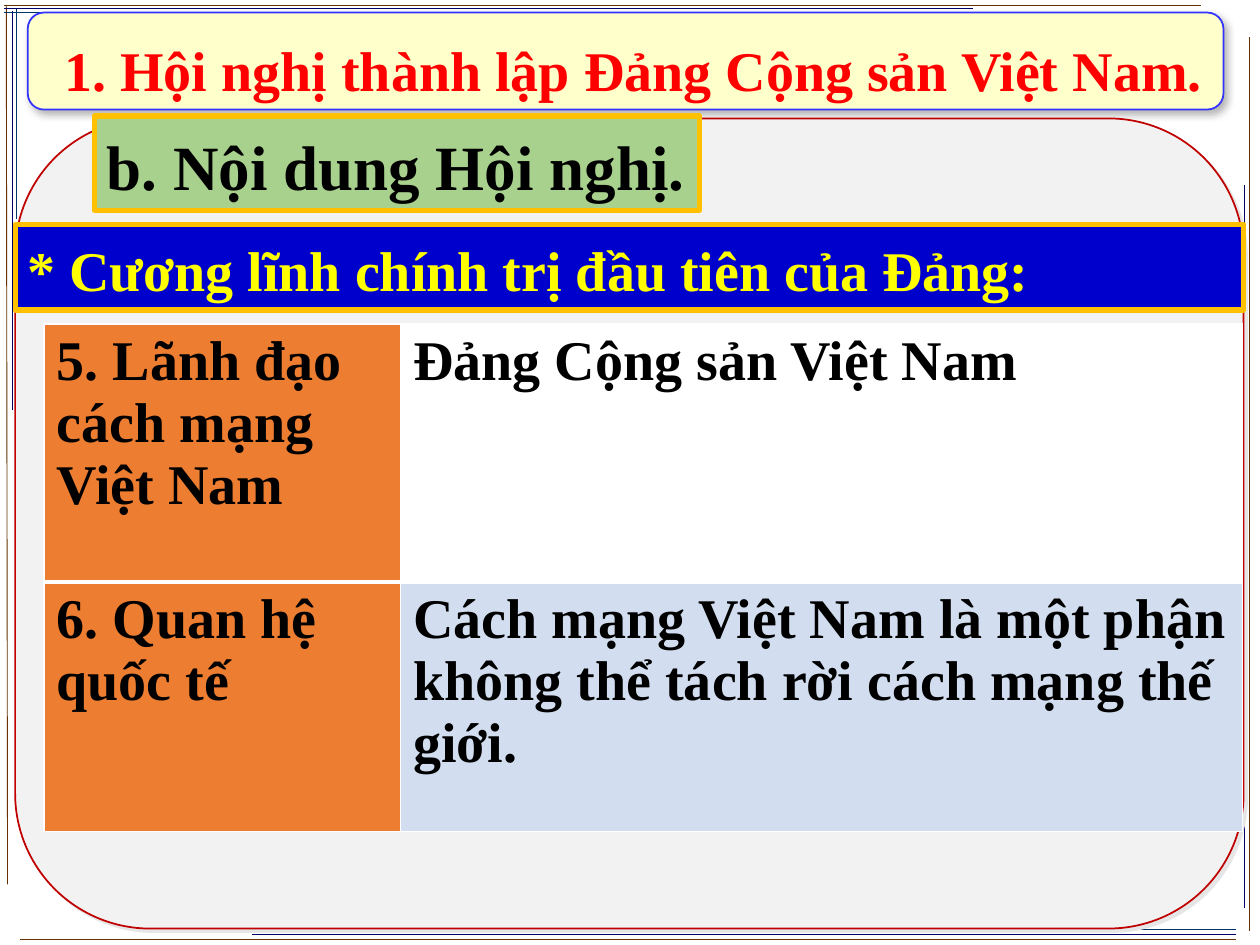
import pptx
import pptx.dml.color
import pptx.enum.shapes
import pptx.enum.text
import pptx.oxml
import pptx.oxml.ns
import pptx.util
from pptx.util import Inches

FONT = "Times New Roman"
NAMESPACE = pptx.oxml.ns.nsdecls("a")
SHAPE = pptx.enum.shapes.MSO_SHAPE
ALIGN = pptx.enum.text.PP_ALIGN
BROWN, NAVY, TEAL = "663300", "000066", "003366"

FRAME_LINES = [
    (0.05, 0.04, 0.06, 7.02, BROWN),
    (0.1, 0.09, 0.1, 3.25, NAVY),
    (0.13, 0.07, 0.13, 1.74, TEAL),
    (0.03, 0.04, 9.53, 0.04, BROWN),
    (0.03, 0.07, 7.72, 0.07, NAVY),
    (0.03, 0.1, 4.1, 0.1, TEAL),
    (9.92, 7.39, 9.92, 0.29, BROWN),
    (9.88, 7.21, 9.88, 1.47, NAVY),
    (9.81, 7.46, 0.16, 7.46, BROWN),
    (9.81, 7.42, 2, 7.42, NAVY),
    (9.81, 7.38, 5.68, 7.38, TEAL),
]

PLATFORM_ROWS = [
    ("5. Lãnh đạo cách mạng Việt Nam", "Đảng Cộng sản Việt Nam", "FFFFFF"),
    ("6. Quan hệ quốc tế",
     "Cách mạng Việt Nam là một phận không thể tách rời cách mạng thế giới.",
     "D2DEEF"),
]


def rgb(value):
    """Turn a hex string into a colour."""
    return pptx.dml.color.RGBColor.from_string(value)


def write(frame, text, size=32, color="000000", align=ALIGN.LEFT, spacing=1.0):
    """Fill a text frame or table cell frame with one bold paragraph."""
    frame.word_wrap = True
    paragraph = frame.paragraphs[0]
    paragraph.alignment = align
    paragraph.line_spacing = spacing
    run = paragraph.add_run()
    run.text = text
    run.font.name = FONT
    run.font.size = pptx.util.Pt(size)
    run.font.bold = True
    run.font.color.rgb = rgb(color)


def add_panel(slide, box, kind, fill, line, width):
    """Add a filled and outlined shape without a shadow."""
    panel = slide.shapes.add_shape(kind, *map(Inches, box))
    panel.shadow.inherit = False
    panel.fill.solid()
    panel.fill.fore_color.rgb = rgb(fill)
    panel.line.color.rgb = rgb(line)
    panel.line.width = pptx.util.Pt(width)
    return panel


def cast_shadow(panel, color, alpha, blur, distance, angle):
    """Give a panel an outer shadow."""
    effects = panel.element.spPr.find(pptx.oxml.ns.qn("a:effectLst"))
    effects.append(pptx.oxml.parse_xml(
        f'<a:outerShdw {NAMESPACE} blurRad="{pptx.util.Pt(blur)}" '
        f'dist="{pptx.util.Pt(distance)}" dir="{angle * 60000}" algn="tl" '
        f'rotWithShape="0"><a:srgbClr val="{color}">'
        f'<a:alpha val="{alpha * 1000}"/></a:srgbClr></a:outerShdw>'))


def add_frame(slide):
    """Draw the thin lines along the slide edges."""
    for *ends, color in FRAME_LINES:
        edge = slide.shapes.add_connector(
            pptx.enum.shapes.MSO_CONNECTOR.STRAIGHT, *map(Inches, ends))
        edge.line.color.rgb = rgb(color)
        edge.line.width = pptx.util.Pt(0.5)
        edge.element.spPr.append(pptx.oxml.parse_xml(f"<a:effectLst {NAMESPACE}/>"))


def add_background(slide, banner_box, content_box):
    """Add the title banner and the rounded content panel."""
    banner = add_panel(slide, banner_box, SHAPE.ROUNDED_RECTANGLE, "FFFFCC", "3333FF", 1)
    cast_shadow(banner, "000000", 30, 4.5, 2.6, 53)
    content = add_panel(slide, content_box, SHAPE.ROUNDED_RECTANGLE, "F2F2F2", "C00000", 1)
    cast_shadow(content, "E7E6E6", 100, 0, 2.8, 45)


def place_title(slide, box, text):
    """Format the title placeholder and bring it in front of the banner."""
    title = slide.shapes.title
    title.left, title.top, title.width, title.height = map(Inches, box)
    title.text_frame.auto_size = pptx.enum.text.MSO_AUTO_SIZE.NONE
    title.text_frame.vertical_anchor = pptx.enum.text.MSO_ANCHOR.TOP
    write(title.text_frame, text, color="FF0000", align=ALIGN.CENTER)
    title.element.getparent().append(title.element)


def add_heading(slide, box, text, fill, **text_format):
    """Add a gold-edged heading bar."""
    heading = add_panel(slide, box, SHAPE.RECTANGLE, fill, "FFC000", 3)
    heading.text_frame.vertical_anchor = pptx.enum.text.MSO_ANCHOR.TOP
    write(heading.text_frame, text, spacing=1.07, **text_format)


def fill_cell(cell, text, fill, top_width, bottom_width):
    """Write a cell and set its white borders and fill."""
    write(cell.text_frame, text)
    properties = cell._tc.get_or_add_tcPr()
    for side, width in (("L", 1), ("R", 1), ("T", top_width), ("B", bottom_width)):
        properties.append(pptx.oxml.parse_xml(
            f'<a:ln{side} {NAMESPACE} w="{pptx.util.Pt(width)}"><a:solidFill>'
            f'<a:srgbClr val="FFFFFF"/></a:solidFill></a:ln{side}>'))
    cell.fill.solid()
    cell.fill.fore_color.rgb = rgb(fill)


def add_platform_table(slide, box, column_widths, row_heights):
    """Add the table of the platform's points."""
    table = slide.shapes.add_table(
        len(row_heights), len(column_widths), *map(Inches, box)).table
    for column, width in zip(table.columns, column_widths):
        column.width = Inches(width)
    for index, (point, content, fill) in enumerate(PLATFORM_ROWS):
        table.rows[index].height = Inches(row_heights[index])
        widths = (1, 3) if index == 0 else (3, 1)
        fill_cell(table.cell(index, 0), point, "ED7D31", *widths)
        fill_cell(table.cell(index, 1), content, fill, *widths)


def main():
    """Build and save the slide."""
    deck = pptx.Presentation()
    deck.slide_width, deck.slide_height = Inches(10), Inches(7.5)
    slide = deck.slides.add_slide(deck.slide_layouts[5])
    add_frame(slide)
    add_background(slide, (0.22, 0.1, 9.49, 0.77), (0.12, 0.94, 9.75, 6.43))
    place_title(slide, (0.35, 0.23, 9.36, 1.18),
                "1. Hội nghị thành lập Đảng Cộng sản Việt Nam.")
    add_heading(slide, (0.75, 0.92, 4.8, 0.75), "b. Nội dung Hội nghị.",
                "A9D18E", size=36)
    add_heading(slide, (0.12, 1.78, 9.75, 0.68),
                "* Cương lĩnh chính trị đầu tiên của Đảng:",
                "0000CC", color="FFFF00")
    add_platform_table(slide, (0.35, 2.57, 9.51, 4.03), (2.83, 6.68), (2.05, 1.98))
    deck.save("out.pptx")


if __name__ == "__main__":
    main()
